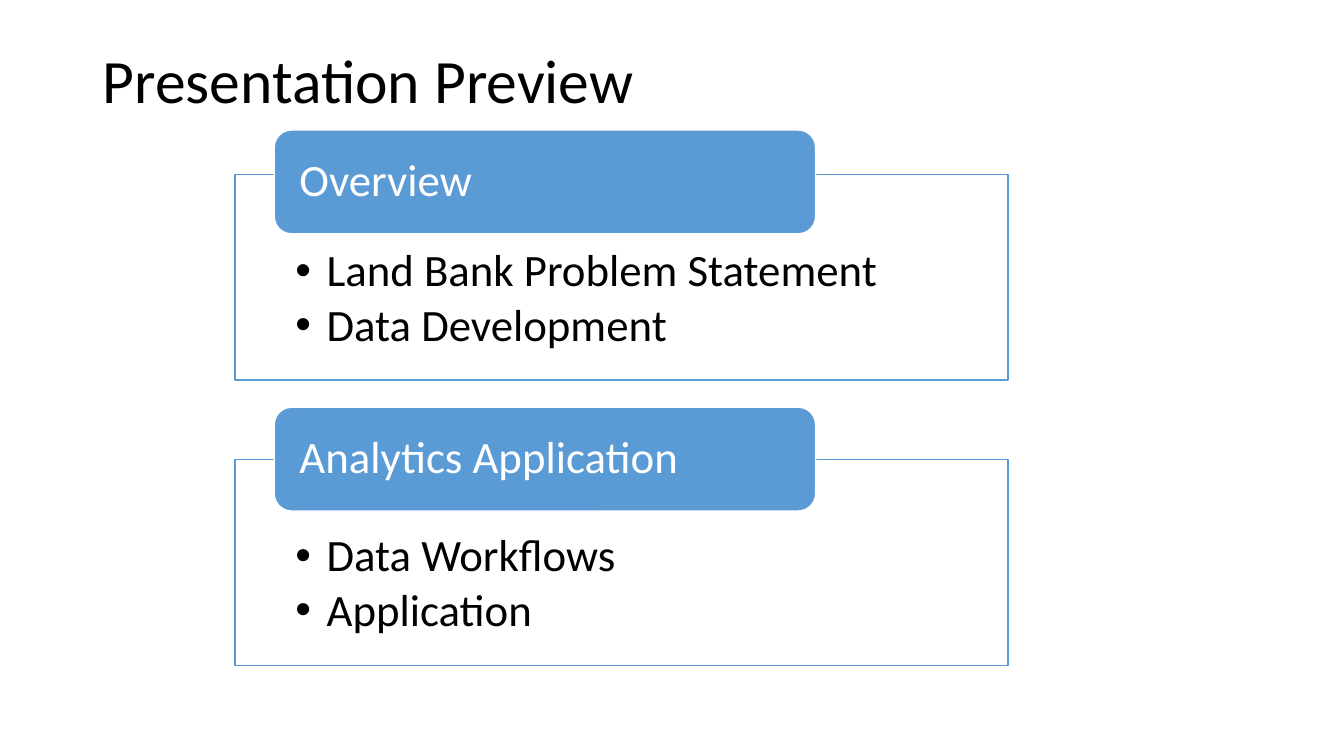
from lxml.etree import SubElement
from pptx import Presentation
from pptx.dml.color import RGBColor
from pptx.enum.shapes import MSO_SHAPE
from pptx.enum.text import MSO_ANCHOR, PP_ALIGN
from pptx.oxml.ns import qn
from pptx.util import Inches, Pt


def paint(target, color):
    target.fill.solid()
    target.fill.fore_color.rgb = RGBColor.from_string(color)


def write(shape, lines, size, color, insets, anchor, after=0, bullet=False):
    frame = shape.text_frame
    frame.word_wrap = True
    frame.vertical_anchor = anchor
    left, top, right, bottom = map(Inches, insets)
    frame.margin_left, frame.margin_right = left, right
    frame.margin_top, frame.margin_bottom = top, bottom
    frame.text = "\n".join(lines)
    for para in frame.paragraphs:
        para.alignment = PP_ALIGN.LEFT
        para.line_spacing = 0.9
        para.space_after = Pt(after)
        if bullet:
            props = para._p.get_or_add_pPr()
            props.set("marL", str(Inches(0.31)))
            props.set("indent", str(-Inches(0.31)))
            SubElement(props, qn("a:buFont"), typeface="Arial")
            SubElement(props, qn("a:buChar"), char="•")
        para.font.name = "Calibri"
        para.font.size = Pt(size)
        paint(para.font, color)


deck = Presentation()
deck.slide_width = Inches(13.33)
deck.slide_height = Inches(7.5)
slide = deck.slides.add_slide(deck.slide_layouts[6])
shapes = slide.shapes

title = shapes.add_textbox(Inches(0.92), Inches(0.4), Inches(11.43), Inches(0.85))
write(title, ["Presentation Preview"], 44, "000000",
      (0.1, 0.05, 0.1, 0.05), MSO_ANCHOR.MIDDLE)

parts = [
    ("Overview", 1.29, 1.73, ["Land Bank Problem Statement", "Data Development"]),
    ("Analytics Application", 4.04, 4.56, ["Data Workflows", "Application"]),
]
for name, head, top, items in parts:
    panel = shapes.add_shape(MSO_SHAPE.RECTANGLE, Inches(2.33), Inches(top),
                             Inches(7.67), Inches(2.04))
    label = shapes.add_shape(MSO_SHAPE.ROUNDED_RECTANGLE, Inches(2.72), Inches(head),
                             Inches(5.37), Inches(1.03))
    for shape, fill, edge in ((panel, "FFFFFF", "5B9BD5"), (label, "5B9BD5", "FFFFFF")):
        shape.shadow.inherit = False
        paint(shape, fill)
        paint(shape.line, edge)
        shape.line.width = Pt(1)
    tint = panel._element.spPr.find(qn("a:solidFill"))[0]
    SubElement(tint, qn("a:alpha"), val="90000")
    write(panel, items, 32, "000000", (0.6, 0.73, 0.6, 0.25),
          MSO_ANCHOR.TOP, 4.5, True)
    write(label, [name], 32, "FFFFFF", (0.2, 0, 0.2, 0), MSO_ANCHOR.MIDDLE)

deck.save("out.pptx")
